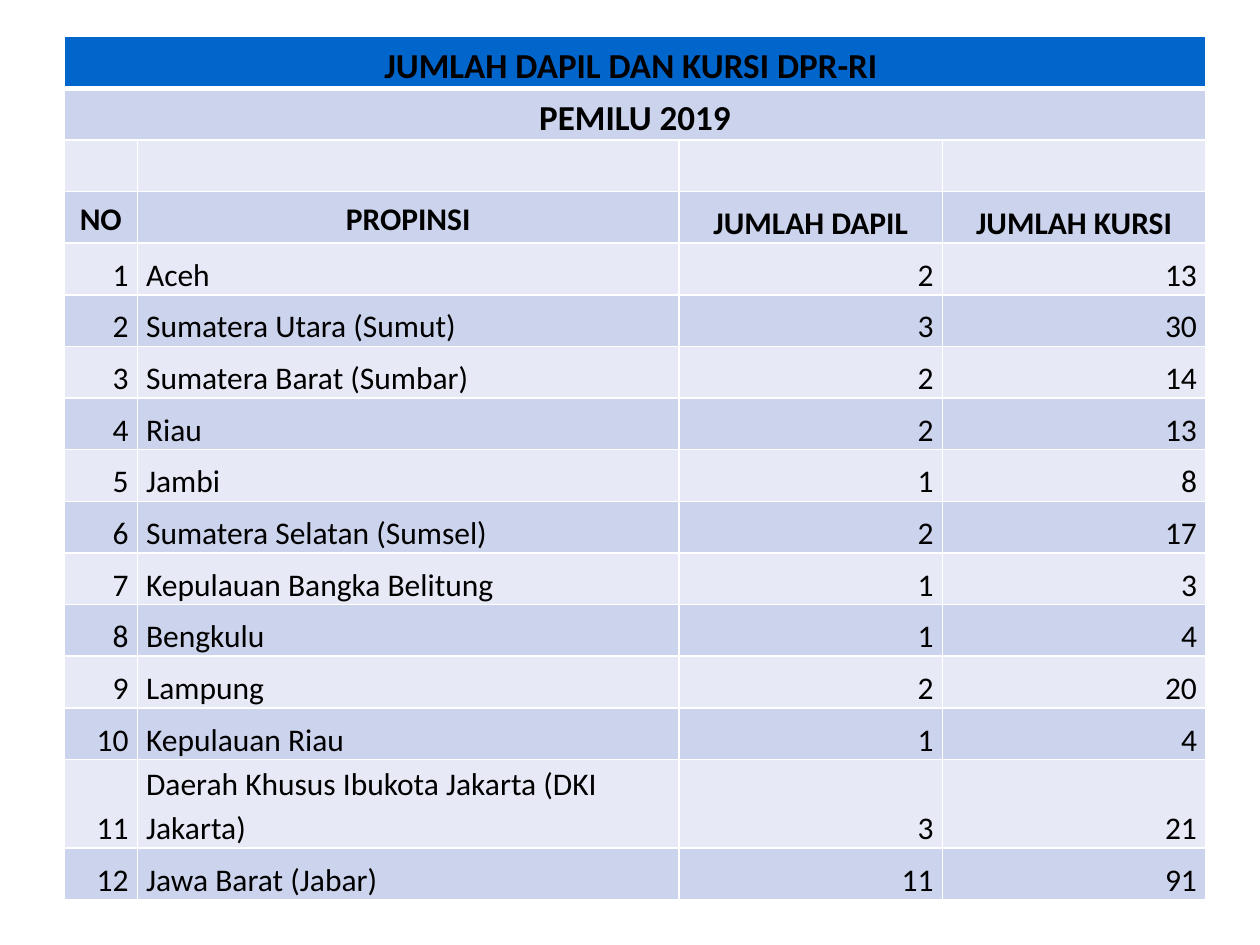
from lxml import etree
from pptx import Presentation
from pptx.dml.color import RGBColor
from pptx.enum.text import MSO_ANCHOR, PP_ALIGN
from pptx.oxml.ns import qn
from pptx.util import Inches, Pt

LEFT, CENTER, RIGHT = PP_ALIGN.LEFT, PP_ALIGN.CENTER, PP_ALIGN.RIGHT
MIDDLE, BOTTOM = MSO_ANCHOR.MIDDLE, MSO_ANCHOR.BOTTOM

# Content
TITLES = ["JUMLAH DAPIL DAN KURSI DPR-RI ", "PEMILU 2019"]
HEADERS = ["NO", "PROPINSI", "JUMLAH DAPIL", "JUMLAH KURSI"]
PROVINCES = [
    ("Aceh", 2, 13),
    ("Sumatera Utara (Sumut)", 3, 30),
    ("Sumatera Barat (Sumbar)", 2, 14),
    ("Riau", 2, 13),
    ("Jambi", 1, 8),
    ("Sumatera Selatan (Sumsel)", 2, 17),
    ("Kepulauan Bangka Belitung", 1, 3),
    ("Bengkulu", 1, 4),
    ("Lampung", 2, 20),
    ("Kepulauan Riau", 1, 4),
    ("Daerah Khusus Ibukota Jakarta (DKI Jakarta)", 3, 21),
    ("Jawa Barat (Jabar)", 11, 91),
]

# Style and layout
COLORS = {"title": "0066CC", "dark": "CCD3EC", "light": "E7EAF6",
          "border": "FFFFFF", "text": "000000"}
FONT = "Calibri"
TABLE_LEFT, TABLE_TOP = 0.51, 0.29
COLUMN_WIDTHS = [0.58, 4.3, 2.09, 2.09]
ROW_HEIGHT, TALL_ROW_HEIGHT = 0.41, 0.44
HEADER_ANCHORS = [MIDDLE, MIDDLE, BOTTOM, BOTTOM]
DATA_ALIGNMENTS = [RIGHT, LEFT, RIGHT, RIGHT]
HEADER_ROW = len(TITLES) + 1
FIRST_DATA_ROW = HEADER_ROW + 1
ROW_COUNT = FIRST_DATA_ROW + len(PROVINCES)
TALL_ROW = ROW_COUNT - 2


def set_borders(cell, bottom_width):
    properties = cell._tc.get_or_add_tcPr()
    widths = {"a:lnL": 1, "a:lnR": 1, "a:lnT": 1, "a:lnB": bottom_width}
    for position, (tag, width) in enumerate(widths.items()):
        line = etree.Element(qn(tag), w=str(Pt(width)))
        fill = etree.SubElement(line, qn("a:solidFill"))
        etree.SubElement(fill, qn("a:srgbClr"), val=COLORS["border"])
        properties.insert(position, line)


def style_cell(cell, row):
    shade = "title" if row == 0 else "dark" if row % 2 else "light"
    cell.fill.solid()
    cell.fill.fore_color.rgb = RGBColor.from_string(COLORS[shade])
    cell.margin_left = cell.margin_right = Inches(0.07)
    cell.margin_top = cell.margin_bottom = 0
    set_borders(cell, 3 if row == 0 else 1)


def write_cell(cell, text, alignment, size=18, bold=False, anchor=BOTTOM):
    cell.vertical_anchor = anchor
    paragraph = cell.text_frame.paragraphs[0]
    paragraph.alignment = alignment
    paragraph.line_spacing = 1.15
    run = paragraph.add_run()
    run.text = str(text)
    run.font.name = FONT
    run.font.size = Pt(size)
    run.font.bold = bold
    run.font.color.rgb = RGBColor.from_string(COLORS["text"])


def main():
    presentation = Presentation()
    presentation.slide_width = Inches(10)
    presentation.slide_height = Inches(7.5)
    slide = presentation.slides.add_slide(presentation.slide_layouts[6])

    # Table grid
    table_height = (ROW_COUNT - 1) * ROW_HEIGHT + TALL_ROW_HEIGHT
    table = slide.shapes.add_table(
        ROW_COUNT, len(COLUMN_WIDTHS), Inches(TABLE_LEFT), Inches(TABLE_TOP),
        Inches(sum(COLUMN_WIDTHS)), Inches(table_height)).table
    for column, width in zip(table.columns, COLUMN_WIDTHS):
        column.width = Inches(width)
    for index, row in enumerate(table.rows):
        row.height = Inches(TALL_ROW_HEIGHT if index == TALL_ROW else ROW_HEIGHT)
        for cell in row.cells:
            style_cell(cell, index)

    # Title rows across all columns
    for index, title in enumerate(TITLES):
        cell = table.cell(index, 0)
        cell.merge(table.cell(index, len(COLUMN_WIDTHS) - 1))
        write_cell(cell, title, CENTER, size=20, bold=True)

    # Column headers
    for column, (header, anchor) in enumerate(zip(HEADERS, HEADER_ANCHORS)):
        write_cell(table.cell(HEADER_ROW, column), header, CENTER,
                   bold=True, anchor=anchor)

    # Numbered provinces
    for number, province in enumerate(PROVINCES, start=1):
        row = HEADER_ROW + number
        for column, value in enumerate((number, *province)):
            write_cell(table.cell(row, column), value, DATA_ALIGNMENTS[column])

    presentation.save("out.pptx")


if __name__ == "__main__":
    main()
